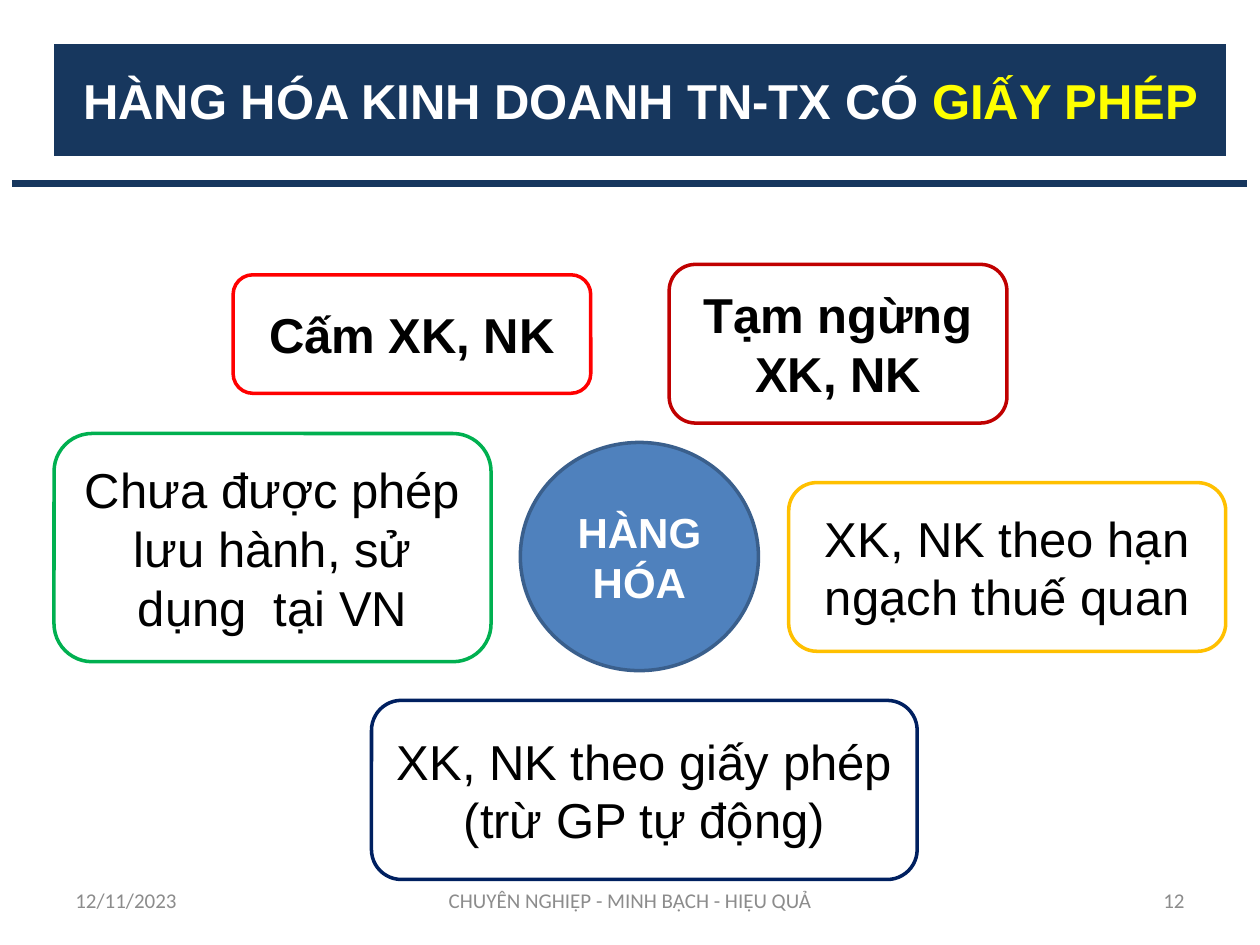
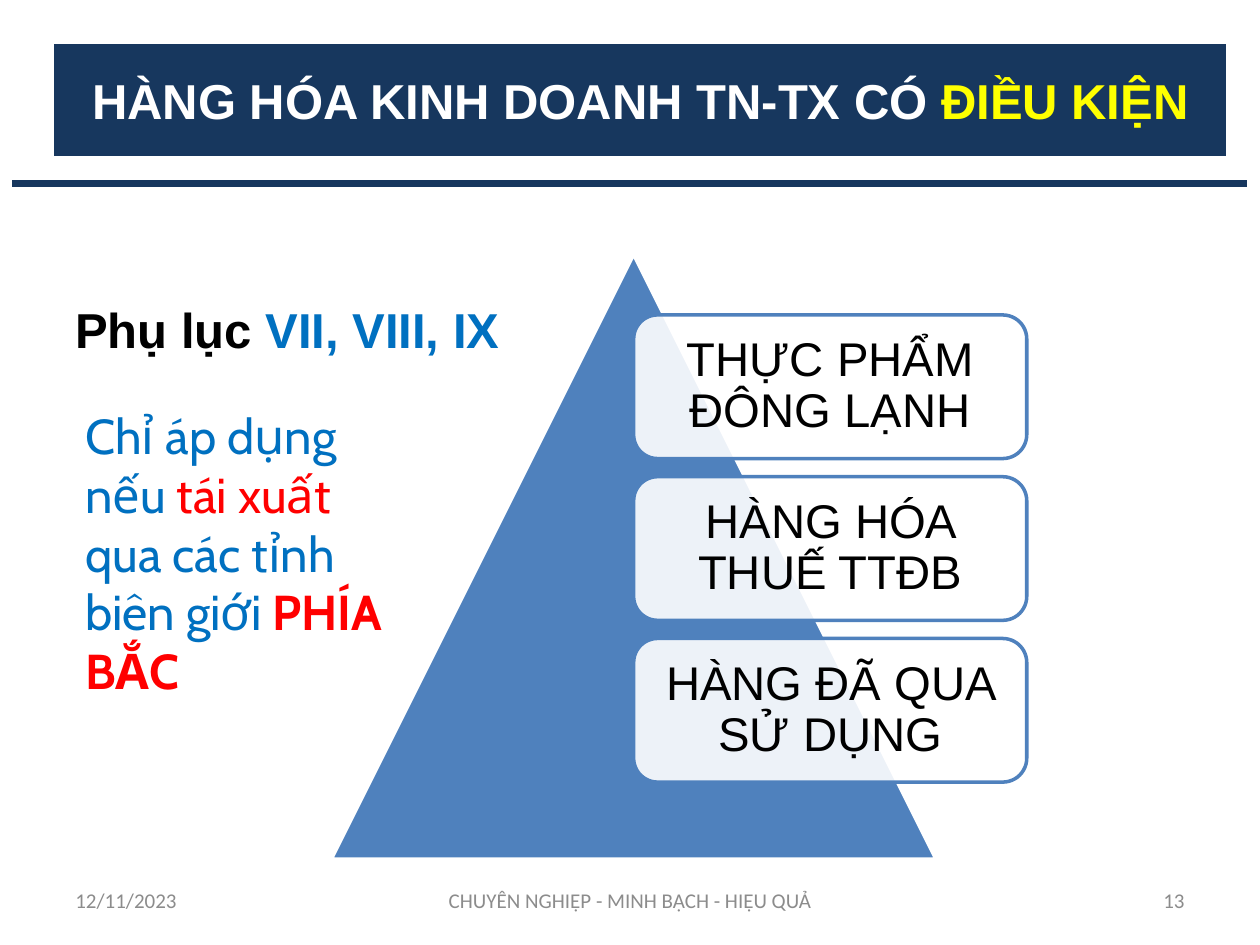
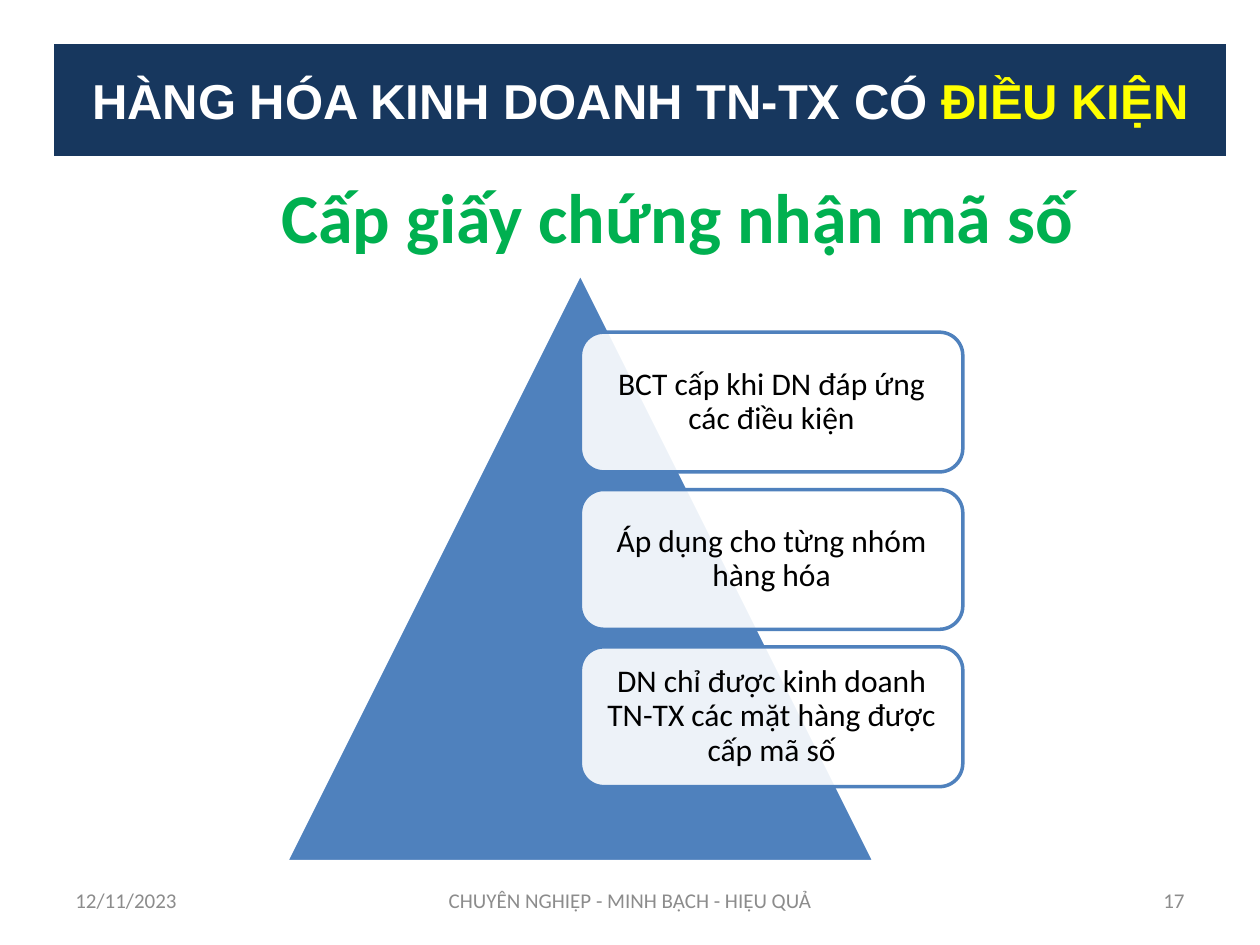
from lxml import etree
from pptx import Presentation
from pptx.dml.color import RGBColor
from pptx.enum.shapes import MSO_SHAPE
from pptx.enum.text import MSO_ANCHOR, PP_ALIGN
from pptx.oxml.ns import qn
from pptx.util import Cm, Pt

RECTANGLE, ROUNDED = MSO_SHAPE.RECTANGLE, MSO_SHAPE.ROUNDED_RECTANGLE
OVAL, TRIANGLE = MSO_SHAPE.OVAL, MSO_SHAPE.ISOSCELES_TRIANGLE
MIDDLE, TOP = MSO_ANCHOR.MIDDLE, MSO_ANCHOR.TOP
LEFT, CENTER, RIGHT = PP_ALIGN.LEFT, PP_ALIGN.CENTER, PP_ALIGN.RIGHT

NAVY, BLUE, DARK_BLUE, TEXT_BLUE = "17375E", "4F81BD", "3A5F8C", "0070C0"
WHITE, BLACK, GREY = "FFFFFF", "000000", "8C8C8C"
RED, GREEN, YELLOW = "FF0000", "00B050", "FFFF00"

# Shared content; places are left, top, width, height in cm
TITLE_START = "HÀNG HÓA KINH DOANH TN-TX CÓ "
TITLE_PLACE = (1.06, 0.85, 23.7, 2.33)
RULE_PLACE = (0.2, 3.6, 24.97, 0.21)
DATE = "12/11/2023"
MOTTO = "CHUYÊN NGHIỆP - MINH BẠCH - HIỆU QUẢ"
FOOTER_TOP, FOOTER_HEIGHT = 17.65, 1.01

# Goods that need a licence: text, bold, outline, place
LICENSED_GOODS = [
    ("Cấm XK, NK", True, RED, (4.7, 5.54, 7.21, 2.39)),
    ("Tạm ngừng XK, NK", True, "C00000", (13.49, 5.33, 6.81, 3.2)),
    ("Chưa được phép lưu hành, sử dụng  tại VN", False, GREEN, (1.09, 8.74, 8.81, 4.6)),
    ("XK, NK theo hạn ngạch thuế quan", False, "FFC000", (15.9, 9.73, 8.81, 3.4)),
    ("XK, NK theo giấy phép (trừ GP tự động)", False, "002060", (7.49, 14.12, 11, 3.61)),
]
HUB_TEXT, HUB_PLACE = "HÀNG HÓA", (10.49, 8.92, 4.8, 4.6)

# Goods that need conditions
CONDITIONAL_GOODS = ["THỰC PHẨM ĐÔNG LẠNH", "HÀNG HÓA THUẾ TTĐB", "HÀNG ĐÃ QUA SỬ DỤNG"]
APPENDIX = [("Phụ lục ", BLACK, True), ("VII, VIII, IX", TEXT_BLUE, True)]
BORDER_NOTE = [
    ("Chỉ áp dụng nếu ", TEXT_BLUE, False),
    ("tái xuất ", RED, False),
    ("qua các tỉnh biên giới ", TEXT_BLUE, False),
    ("PHÍA BẮC", RED, True),
]

# Code certificate
CERTIFICATE = "Cấp giấy chứng nhận mã số"
CERTIFICATE_RULES = [
    "BCT cấp khi DN đáp ứng các điều kiện",
    "Áp dụng cho từng nhóm hàng hóa",
    "DN chỉ được kinh doanh TN-TX các mặt hàng được cấp mã số",
]


def color(hex_string):
    return RGBColor.from_string(hex_string)


def write(shape, runs, size, font="Arial", align=CENTER, anchor=MIDDLE):
    """Write (text, colour, bold) runs into one paragraph."""
    frame = shape.text_frame
    frame.word_wrap = True
    frame.vertical_anchor = anchor
    paragraph = frame.paragraphs[0]
    paragraph.alignment = align
    for text, hex_string, bold in runs:
        run = paragraph.add_run()
        run.text = text
        run.font.name = font
        run.font.size = Pt(size)
        run.font.bold = bold
        run.font.color.rgb = color(hex_string)


def add_shape(slide, kind, place, fill, line):
    shape = slide.shapes.add_shape(kind, *map(Cm, place))
    shape.shadow.inherit = False
    shape.fill.solid()
    shape.fill.fore_color.rgb = color(fill)
    shape.line.color.rgb = color(line)
    shape.line.width = Pt(2)
    return shape


def add_text(slide, place, runs, size, **style):
    write(slide.shapes.add_textbox(*map(Cm, place)), runs, size, **style)


def set_opacity(shape, percent):
    fill_color = shape.fill._xPr.find(qn("a:solidFill"))[0]
    etree.SubElement(fill_color, qn("a:alpha")).set("val", str(percent * 1000))


def add_page(presentation, title_end, number, with_rule=True):
    """Add a slide with the title band, the rule below it and the footer."""
    slide = presentation.slides.add_slide(presentation.slide_layouts[6])
    if with_rule:
        add_shape(slide, RECTANGLE, RULE_PLACE, NAVY, WHITE)
    band = add_shape(slide, RECTANGLE, TITLE_PLACE, NAVY, WHITE)
    write(band, [(TITLE_START, WHITE, True), (title_end, YELLOW, True)], 28)
    footer = [(DATE, 1.27, 5.93, LEFT), (MOTTO, 8.68, 8.05, CENTER),
              (str(number), 18.2, 5.93, RIGHT)]
    for text, left, width, align in footer:
        add_text(slide, (left, FOOTER_TOP, width, FOOTER_HEIGHT),
                 [(text, GREY, False)], 12, font="Calibri", align=align)
    return slide


def add_pyramid(slide, left, top, side, labels, size, font, inset):
    """Add a triangle with a column of boxes starting at its middle."""
    add_shape(slide, TRIANGLE, (left, top, side, side), BLUE, WHITE)
    width, height, gap = 0.65 * side, 0.2375 * side, 0.03 * side
    for index, label in enumerate(labels):
        box_top = top + 0.1 * side + index * (height + gap)
        box = add_shape(slide, ROUNDED, (left + side / 2, box_top, width, height), WHITE, BLUE)
        set_opacity(box, 90)
        write(box, [(label, BLACK, False)], size, font)
        frame = box.text_frame
        frame.paragraphs[0].line_spacing = 0.9
        frame.margin_left = frame.margin_right = Cm(inset)
        frame.margin_top = frame.margin_bottom = Cm(inset)


def build_licence_slide(presentation):
    slide = add_page(presentation, "GIẤY PHÉP", 12)
    for text, bold, outline, place in LICENSED_GOODS:
        write(add_shape(slide, ROUNDED, place, WHITE, outline), [(text, BLACK, bold)], 28)
    hub = add_shape(slide, OVAL, HUB_PLACE, BLUE, DARK_BLUE)
    write(hub, [(HUB_TEXT, WHITE, True)], 24)


def build_condition_slide(presentation):
    slide = add_page(presentation, "ĐIỀU KIỆN", 13)
    add_pyramid(slide, 6.68, 5.13, 12.19, CONDITIONAL_GOODS, 27, "Arial", 0.28)
    add_text(slide, (1.27, 5.92, 9.07, 1.45), APPENDIX, 28, align=LEFT, anchor=TOP)
    add_text(slide, (1.47, 8.05, 6.78, 6.25), BORDER_NOTE, 28,
             font="Cabin", align=LEFT, anchor=TOP)


def build_certificate_slide(presentation):
    slide = add_page(presentation, "ĐIỀU KIỆN", 17, with_rule=False)
    add_text(slide, (1.9, 2.75, 23.5, 3.18), [(CERTIFICATE, GREEN, True)], 40, font="Calibri")
    add_pyramid(slide, 5.77, 5.51, 11.86, CERTIFICATE_RULES, 18, "Calibri", 0.18)


def main():
    presentation = Presentation()
    presentation.slide_width, presentation.slide_height = Cm(25.4), Cm(19.05)
    build_licence_slide(presentation)
    build_condition_slide(presentation)
    build_certificate_slide(presentation)
    presentation.save("out.pptx")


if __name__ == "__main__":
    main()
